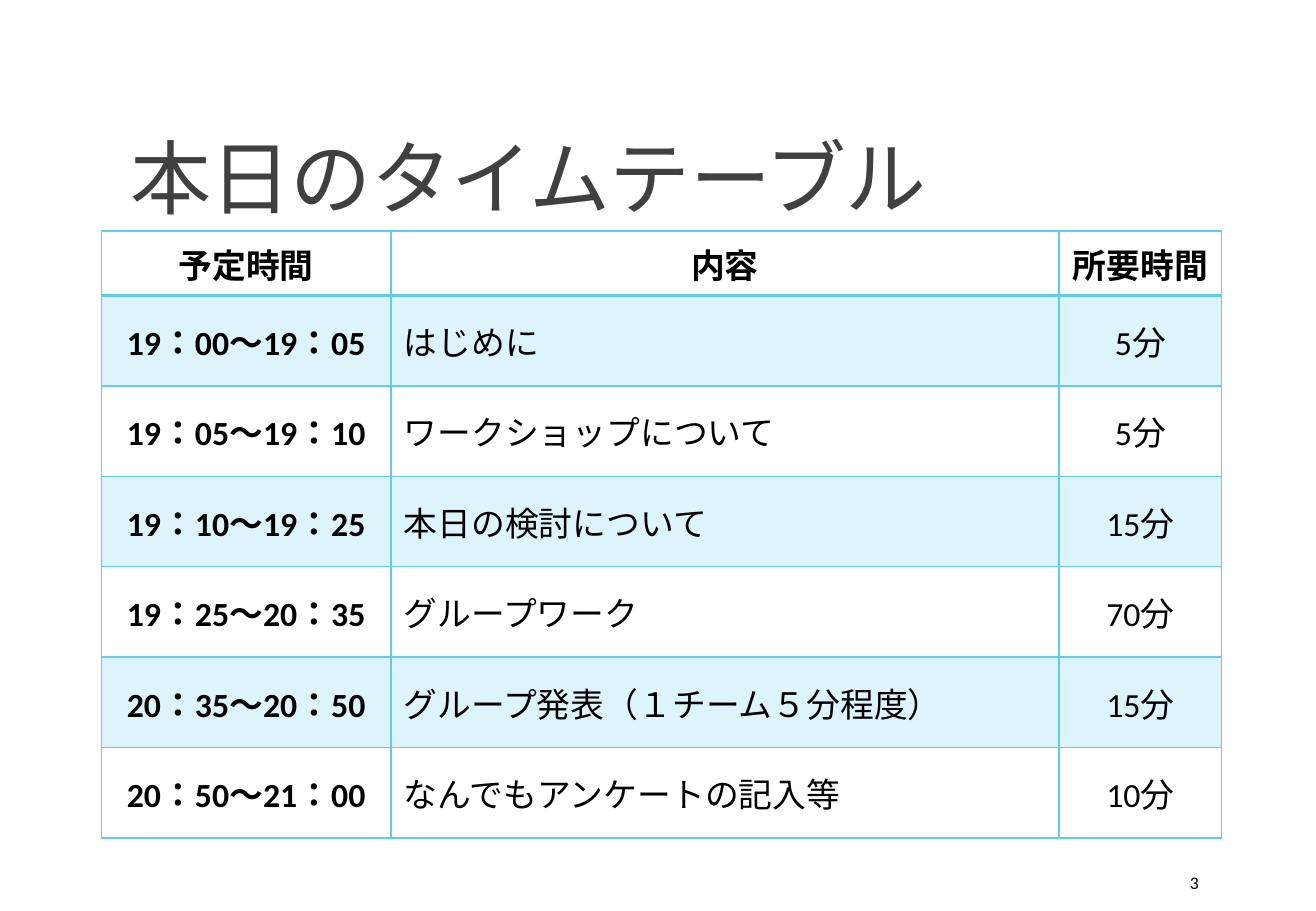
from lxml import etree
from pptx import Presentation
from pptx.dml.color import RGBColor
from pptx.enum.text import MSO_ANCHOR, MSO_AUTO_SIZE, PP_ALIGN
from pptx.oxml.ns import qn
from pptx.util import Cm, Pt

TITLE_ONLY = 5
MIDDLE, BOTTOM = MSO_ANCHOR.MIDDLE, MSO_ANCHOR.BOTTOM
CENTER, RIGHT, JUSTIFY = PP_ALIGN.CENTER, PP_ALIGN.RIGHT, PP_ALIGN.JUSTIFY
LEFT = PP_ALIGN.LEFT
NO_AUTOFIT = MSO_AUTO_SIZE.NONE

LATIN, JAPANESE = "Calibri", "Noto Sans CJK JP"
BLACK, GRAY, SKY = "000000", "404040", "5ECCF3"

HEADER = ("予定時間", "内容", "所要時間")
AGENDA = [
    ("19：00～19：05", "はじめに", "5分"),
    ("19：05～19：10", "ワークショップについて", "5分"),
    ("19：10～19：25", "本日の検討について", "15分"),
    ("19：25～20：35", "グループワーク", "70分"),
    ("20：35～20：50", "グループ発表（１チーム５分程度）", "15分"),
    ("20：50～21：00", "なんでもアンケートの記入等", "10分"),
]
COLUMN_WIDTHS = (6.05, 13.97, 3.4)
HEADER_HEIGHT, AGENDA_HEIGHT = 1.35, 1.89


def color(code):
    return RGBColor.from_string(code)


def set_all(target, values):
    for name, value in values.items():
        setattr(target, name, value)


def write(frame, text, align, size, code, name=LATIN, bold=False,
          language="ja-JP"):
    """Put one formatted run in the first paragraph and return both."""
    para = frame.paragraphs[0]
    para.alignment = align
    span = para.add_run()
    span.text = text
    set_all(span.font, {"name": name, "size": Pt(size), "bold": bold})
    span.font.color.rgb = color(code)
    properties = span.font._element
    properties.set("lang", language)
    east_asian = etree.Element(qn("a:ea"), typeface=JAPANESE)
    properties.find(qn("a:latin")).addnext(east_asian)
    return para, span


def place(shape, box):
    set_all(shape, dict(zip(("left", "top", "width", "height"), map(Cm, box))))


def add_title(page, box, text):
    title = page.shapes.title
    place(title, box)
    set_all(title.text_frame, {"word_wrap": True, "auto_size": NO_AUTOFIT,
                               "vertical_anchor": BOTTOM})
    para, span = write(title.text_frame, text, LEFT, 48, GRAY)
    para.line_spacing = 0.85
    span.font._element.set("spc", "-50")


def add_page_number(page, box, number):
    frame = page.shapes.add_textbox(*map(Cm, box)).text_frame
    set_all(frame, {"word_wrap": True, "vertical_anchor": MIDDLE})
    write(frame, number, RIGHT, 10.5, BLACK)


def add_borders(cell, bottom_width):
    properties = cell._tc.get_or_add_tcPr()
    for side, width in (("L", 1), ("R", 1), ("T", 1), ("B", bottom_width)):
        line = etree.SubElement(properties, qn("a:ln" + side), w=str(Pt(width)))
        fill = etree.SubElement(line, qn("a:solidFill"))
        etree.SubElement(fill, qn("a:srgbClr"), val=SKY)


def fill_band(cell):
    """Fill the cell with a 20 % tint of the border colour."""
    cell.fill.solid()
    cell.fill.fore_color.rgb = color(SKY)
    tint = cell._tc.tcPr.find(qn("a:solidFill")).find(qn("a:srgbClr"))
    etree.SubElement(tint, qn("a:alpha"), val="20000")


def add_timetable(page, left, top):
    rows = [HEADER, *AGENDA]
    heights = [HEADER_HEIGHT] + [AGENDA_HEIGHT] * len(AGENDA)
    table = page.shapes.add_table(
        len(rows), len(HEADER), Cm(left), Cm(top),
        Cm(sum(COLUMN_WIDTHS)), Cm(sum(heights))).table
    set_all(table, {"first_row": False, "horz_banding": False})
    for column, width in zip(table.columns, COLUMN_WIDTHS):
        column.width = Cm(width)
    for row, height in zip(table.rows, heights):
        row.height = Cm(height)
    for i, texts in enumerate(rows):
        for j, text in enumerate(texts):
            cell = table.cell(i, j)
            is_header, is_time, is_topic = i == 0, j == 0, j == 1
            set_all(cell, {"vertical_anchor": MIDDLE,
                           "margin_left": Cm(0.27), "margin_right": Cm(0.27),
                           "margin_top": 0, "margin_bottom": 0})
            add_borders(cell, 2 if is_header else 1)
            if i % 2:
                fill_band(cell)
            else:
                cell.fill.background()
            write(cell.text_frame, text,
                  JUSTIFY if is_topic and not is_header else CENTER, 20, BLACK,
                  name=JAPANESE if is_header or is_topic else LATIN,
                  bold=is_header or is_time,
                  language="zh-CN" if is_time and not is_header else "ja-JP")


def main():
    deck = Presentation()
    set_all(deck, {"slide_width": Cm(27.51), "slide_height": Cm(19.05)})
    page = deck.slides.add_slide(deck.slide_layouts[TITLE_ONLY])
    add_title(page, (2.48, 0.79, 22.71, 4.04), "本日のタイムテーブル")
    add_page_number(page, (22.34, 17.94, 2.97, 1.02), "3")
    add_timetable(page, 2.12, 4.83)
    deck.save("out.pptx")


if __name__ == "__main__":
    main()
